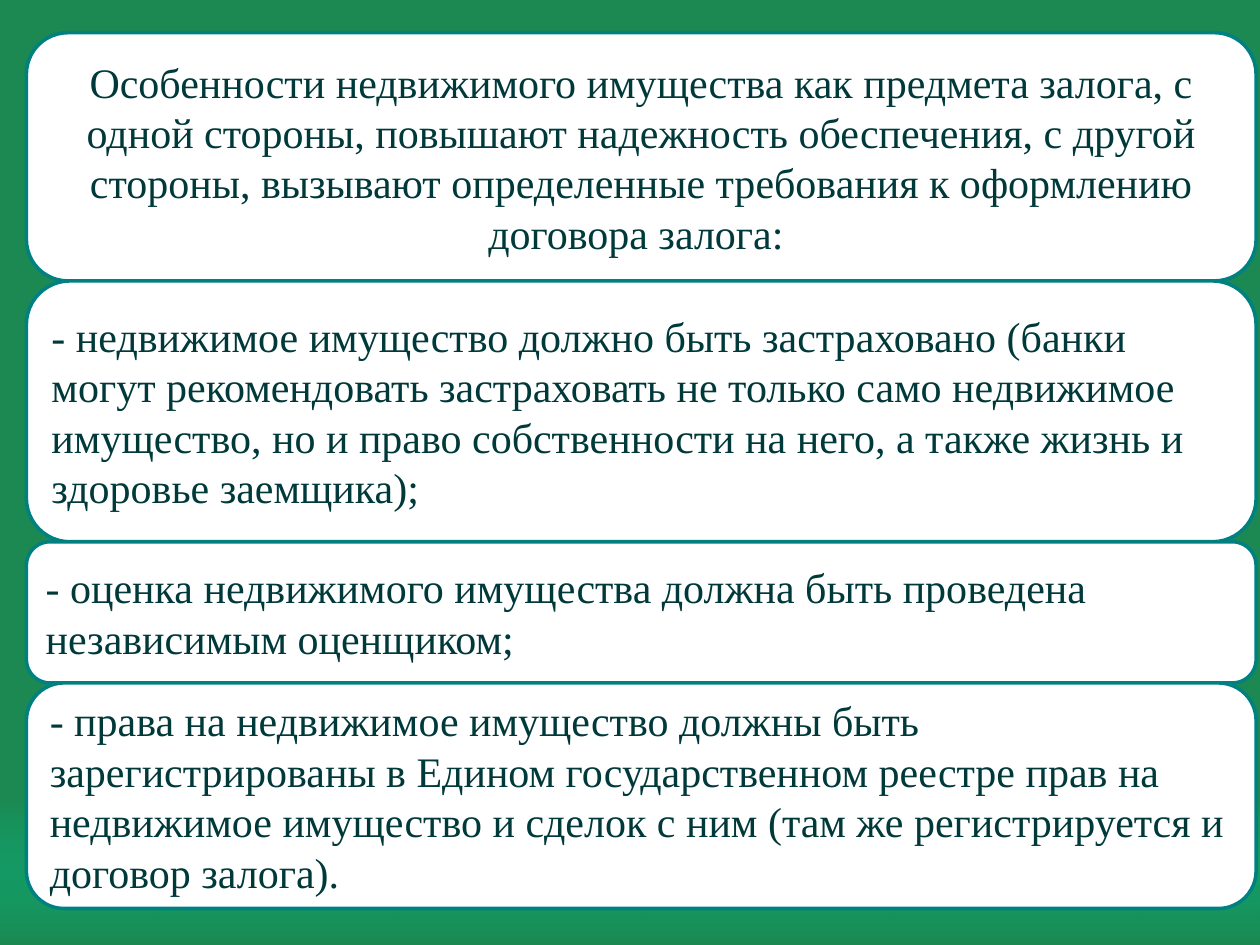
from pptx import Presentation
from pptx.dml.color import RGBColor
from pptx.enum.shapes import MSO_SHAPE
from pptx.enum.text import MSO_ANCHOR, PP_ALIGN
from pptx.oxml.ns import qn
from pptx.util import Inches, Pt
from lxml.etree import SubElement

GREEN = "1C8952"
LEFT, TOP, WIDTH = 0.21, 0.26, 9.76
CARDS = [
    (1.97, PP_ALIGN.CENTER, "Особенности недвижимого имущества как предмета залога, с одной стороны, повышают надежность обеспечения, с другой стороны, вызывают определенные требования к оформлению договора залога: "),
    (2.07, PP_ALIGN.LEFT, "- недвижимое имущество должно быть застраховано (банки могут рекомендовать застраховать не только само недвижимое имущество, но и право собственности на него, а также жизнь и здоровье заемщика);"),
    (1.12, PP_ALIGN.LEFT, "- оценка недвижимого имущества должна быть проведена независимым оценщиком;"),
    (1.79, PP_ALIGN.LEFT, "- права на недвижимое имущество должны быть зарегистрированы в Едином государственном реестре прав на недвижимое имущество и сделок с ним (там же регистрируется и договор залога)."),
]


def color(code):
    return RGBColor.from_string(code)


def add_box(slide, kind, *place):
    box = slide.shapes.add_shape(kind, *map(Inches, place))
    box.shadow.inherit = False
    return box


def add_band(slide):
    band = add_box(slide, MSO_SHAPE.RECTANGLE, 0, 6.35, 10, 1.15)
    band.line.fill.background()
    band.fill.gradient()
    band.fill.gradient_angle = 270
    first, last = band.fill.gradient_stops
    first.color.rgb, first.position = color("00CC99"), 0
    last.color.rgb, last.position = color(GREEN), 1
    tint = next(band.element.iter(qn("a:srgbClr")))
    SubElement(tint, qn("a:alpha"), val="0")


def add_card(slide, top, height, align, text):
    card = add_box(slide, MSO_SHAPE.ROUNDED_RECTANGLE, LEFT, top, WIDTH, height)
    card.fill.solid()
    card.fill.fore_color.rgb = color("FFFFFF")
    card.line.color.rgb = color("008080")
    card.line.width = Pt(2)
    frame = card.text_frame
    frame.word_wrap = True
    frame.vertical_anchor = MSO_ANCHOR.MIDDLE
    para = frame.paragraphs[0]
    para.text = text
    para.alignment = align
    para.font.name = "Times New Roman"
    para.font.size = Pt(24)
    para.font.color.rgb = color("00393A")


def main():
    deck = Presentation()
    deck.slide_width, deck.slide_height = Inches(10), Inches(7.5)
    slide = deck.slides.add_slide(deck.slide_layouts[6])
    slide.background.fill.solid()
    slide.background.fill.fore_color.rgb = color(GREEN)
    add_band(slide)
    top = TOP
    for height, align, text in CARDS:
        add_card(slide, top, height, align, text)
        top += height
    deck.save("out.pptx")


if __name__ == "__main__":
    main()
